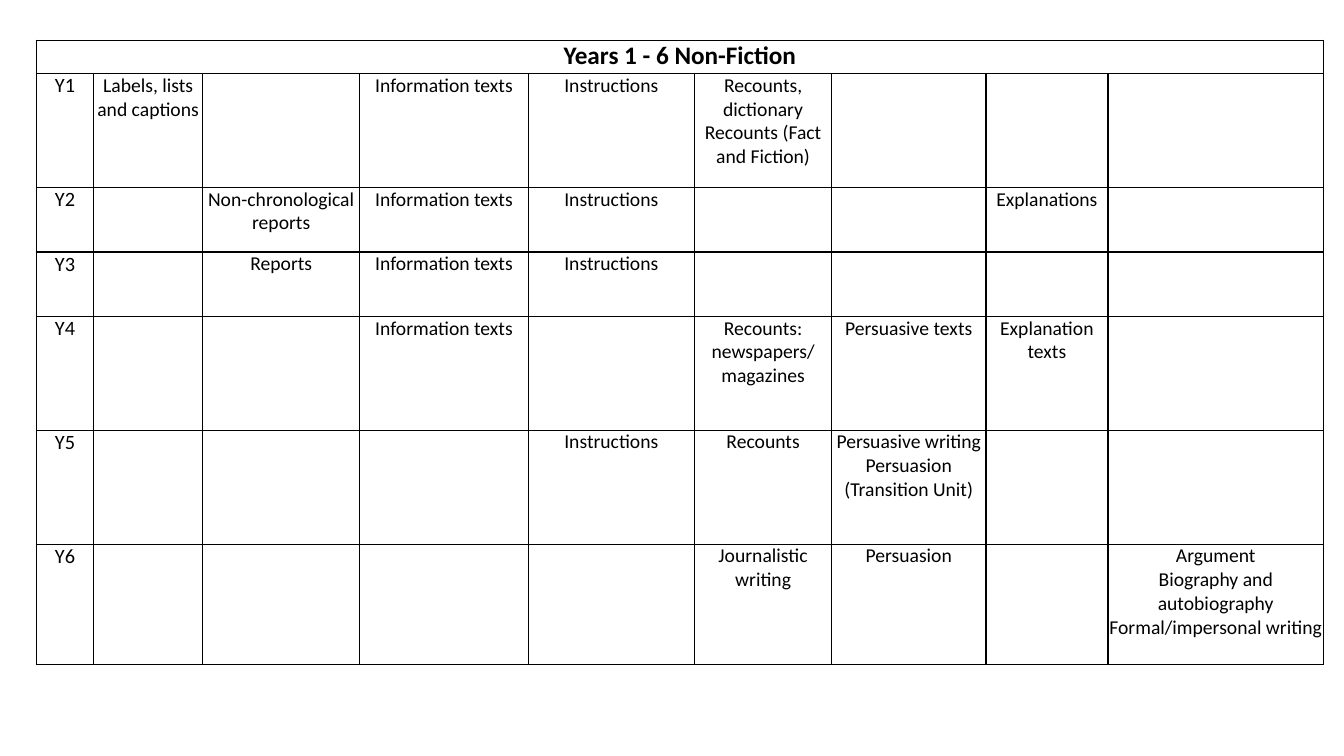
from dataclasses import dataclass

import lxml.etree
import pptx
import pptx.dml.color
import pptx.enum.text
import pptx.oxml.ns
import pptx.table
import pptx.util

PX = 9144  # EMU in one px, at 100 px to the inch
FONT = "Calibri"
INK = "000000"
PAPER = "FFFFFF"


@dataclass
class Year:
    name: str
    height: int
    texts: dict[int, str]  # column -> text; \v breaks a line, \n a paragraph


TITLE = "Years 1 - 6 Non-Fiction"
TITLE_HEIGHT = 33
WIDTHS = [57, 108, 156, 167, 165, 136, 153, 121, 214]
INFO, INSTRUCT = "Information texts", "Instructions"

YEARS = [
    Year("Y1", 113, {1: "Labels, lists and captions", 3: INFO, 4: INSTRUCT,
                     5: "Recounts, dictionary\vRecounts (Fact and Fiction)"}),
    Year("Y2", 64, {2: "Non-chronological reports", 3: INFO, 4: INSTRUCT,
                    7: "Explanations"}),
    Year("Y3", 64, {2: "Reports", 3: INFO, 4: INSTRUCT}),
    Year("Y4", 113, {3: INFO, 5: "Recounts: newspapers/\nmagazines",
                     6: "Persuasive texts", 7: "Explanation texts"}),
    Year("Y5", 113, {4: INSTRUCT, 5: "Recounts",
                     6: "Persuasive writing\vPersuasion (Transition Unit)"}),
    Year("Y6", 119, {5: "Journalistic writing", 6: "Persuasion",
                     8: "Argument\nBiography and autobiography\n"
                        "Formal/impersonal writing"}),
]


def px(n: int) -> pptx.util.Emu:
    return pptx.util.Emu(n * PX)


def color(code: str) -> pptx.dml.color.RGBColor:
    return pptx.dml.color.RGBColor.from_string(code)


def add_borders(cell: pptx.table._Cell) -> None:
    """Draw a 1 pt line on each side of the cell."""
    qn = pptx.oxml.ns.qn
    props = cell._tc.get_or_add_tcPr()
    for side in ("lnL", "lnR", "lnT", "lnB"):
        line = lxml.etree.SubElement(props, qn(f"a:{side}"), w="12700")
        fill = lxml.etree.SubElement(line, qn("a:solidFill"))
        lxml.etree.SubElement(fill, qn("a:srgbClr"), val=INK)


def fill_cell(cell: pptx.table._Cell, text: str, size: float,
              bold: bool = False) -> None:
    cell.margin_left = cell.margin_right = cell.margin_top = 0
    cell.margin_bottom = px(2)
    add_borders(cell)
    cell.fill.solid()
    cell.fill.fore_color.rgb = color(PAPER)
    cell.text_frame.text = text
    for para in cell.text_frame.paragraphs:
        para.alignment = pptx.enum.text.PP_ALIGN.CENTER
        para.font.name = FONT
        para.font.size = pptx.util.Pt(size)
        para.font.bold = bold
        para.font.color.rgb = color(INK)


def main() -> None:
    deck = pptx.Presentation()
    deck.slide_width, deck.slide_height = px(1333), px(750)
    slide = deck.slides.add_slide(deck.slide_layouts[6])

    # Table frame
    heights = [TITLE_HEIGHT] + [year.height for year in YEARS]
    table = slide.shapes.add_table(
        len(heights), len(WIDTHS), px(36), px(40),
        px(sum(WIDTHS)), px(sum(heights))).table
    table.first_row = table.horz_banding = False
    for column, width in zip(table.columns, WIDTHS):
        column.width = px(width)
    for row, height in zip(table.rows, heights):
        row.height = px(height)

    # Title row
    for col in range(len(WIDTHS)):
        fill_cell(table.cell(0, col), "" if col else TITLE, 18, bold=True)
    table.cell(0, 0).merge(table.cell(0, len(WIDTHS) - 1))

    # One row per year
    for row, year in enumerate(YEARS, start=1):
        fill_cell(table.cell(row, 0), year.name, 14.5)
        for col in range(1, len(WIDTHS)):
            fill_cell(table.cell(row, col), year.texts.get(col, ""), 14)

    deck.save("out.pptx")


if __name__ == "__main__":
    main()
